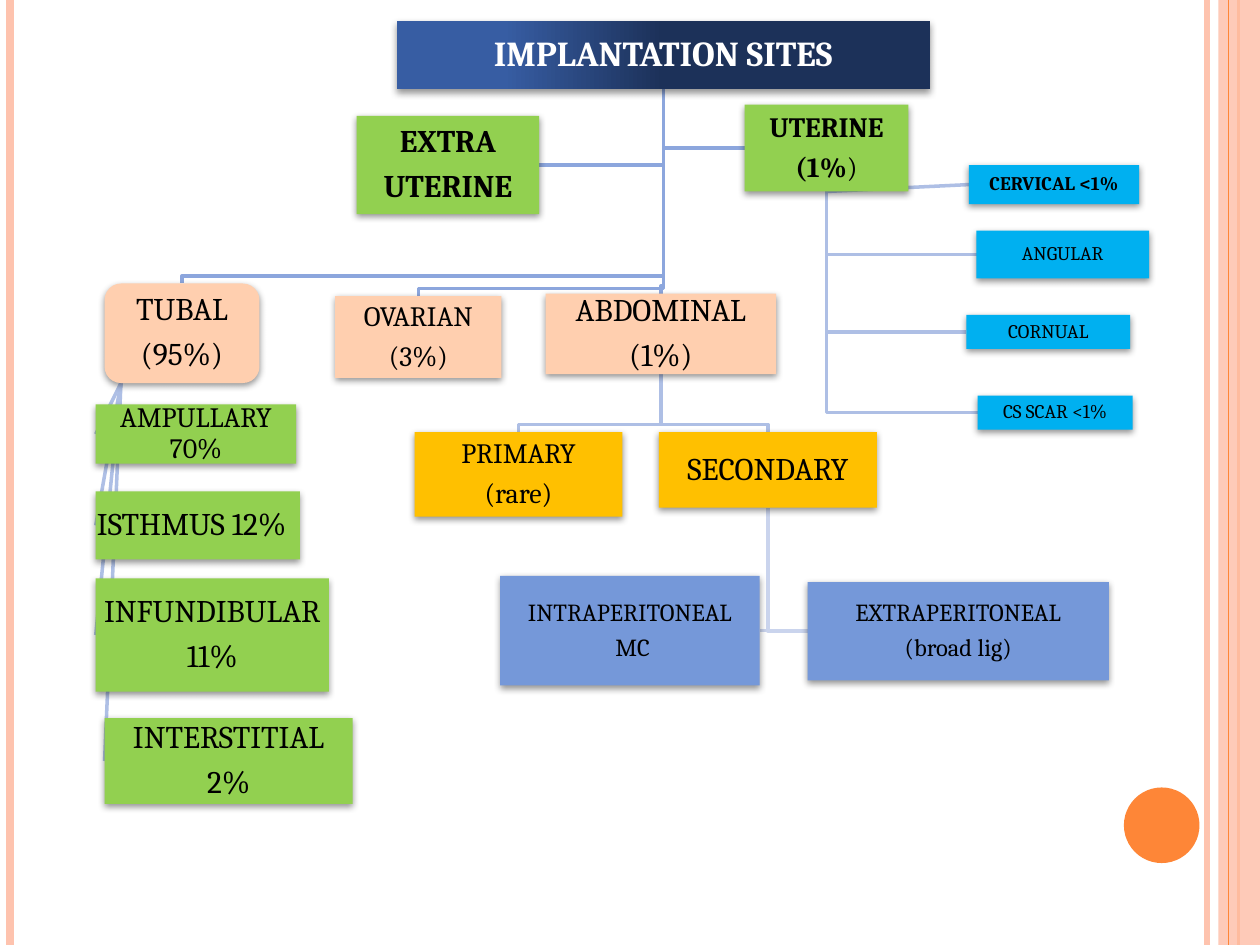
"""Build the implantation sites tree slide."""
from dataclasses import dataclass

from lxml.etree import SubElement
from pptx import Presentation
from pptx.dml.color import RGBColor as Color
from pptx.enum.shapes import MSO_CONNECTOR as Connector, MSO_SHAPE as Shape
from pptx.enum.text import MSO_ANCHOR as Anchor, PP_ALIGN as Align
from pptx.oxml.ns import qn
from pptx.util import Inches, Pt


@dataclass(frozen=True)
class Theme:
    font: str = "Cambria"
    black: str = "000000"
    white: str = "FFFFFF"
    orange: str = "FE8637"
    pale_orange: str = "FEC3AE"
    peach: str = "FFCFAF"
    green: str = "92D050"
    amber: str = "FFC000"
    blue: str = "7598D9"
    cyan: str = "00B0F0"
    title_start: str = "375DA3"
    title_end: str = "1C3159"
    first_link: str = "8CA6DD"
    second_link: str = "AEBFE5"
    third_link: str = "CAD4ED"
    title_size: int = 20
    large: int = 18
    medium: int = 16
    small: int = 14
    tiny: int = 11


@dataclass(frozen=True)
class Box:
    text: str
    left: float
    top: float
    width: float
    height: float
    fill: str
    size: int
    bold: bool = False

    @property
    def center(self):
        return self.left + self.width / 2

    @property
    def middle(self):
        return self.top + self.height / 2

    @property
    def bottom(self):
        return self.top + self.height


THEME = Theme()
BOXES = {
    "title": Box("IMPLANTATION SITES", 3.15, 0.17, 4.23, 0.54, THEME.title_end, THEME.title_size, True),
    "tubal": Box("TUBAL\n(95%)", 0.83, 2.25, 1.23, 0.79, THEME.peach, THEME.large),
    "ampullary": Box("AMPULLARY 70%", 0.76, 3.21, 1.59, 0.47, THEME.green, THEME.medium),
    "infundibular": Box("INFUNDIBULAR\n11%", 0.76, 4.59, 1.85, 0.9, THEME.green, THEME.large),
    "interstitial": Box("INTERSTITIAL\n2%", 0.83, 5.7, 1.97, 0.68, THEME.green, THEME.large),
    "isthmus": Box("ISTHMUS 12%\t", 0.76, 3.9, 1.62, 0.54, THEME.green, THEME.large),
    "abdominal": Box("ABDOMINAL\n(1%)", 4.33, 2.33, 1.83, 0.64, THEME.peach, THEME.large),
    "secondary": Box("SECONDARY", 5.23, 3.43, 1.73, 0.6, THEME.amber, THEME.large),
    "intraperitoneal": Box("INTRAPERITONEAL\n MC", 3.97, 4.57, 2.06, 0.87, THEME.blue, THEME.small),
    "extraperitoneal": Box("EXTRAPERITONEAL\n(broad lig)", 6.41, 4.62, 2.39, 0.78, THEME.blue, THEME.small),
    "primary": Box("PRIMARY\n(rare)", 3.29, 3.43, 1.65, 0.67, THEME.amber, THEME.medium),
    "ovarian": Box("OVARIAN\n(3%)", 2.66, 2.35, 1.32, 0.65, THEME.peach, THEME.medium),
    "extrauterine": Box("EXTRA\nUTERINE", 2.83, 0.92, 1.45, 0.78, THEME.green, THEME.large, True),
    "uterine": Box("UTERINE\n(1%", 5.91, 0.83, 1.3, 0.69, THEME.green, THEME.medium, True),
    "angular": Box("ANGULAR", 7.75, 1.83, 1.37, 0.38, THEME.cyan, THEME.tiny),
    "cervical": Box("CERVICAL <1%", 7.69, 1.31, 1.35, 0.31, THEME.cyan, THEME.tiny, True),
    "cornual": Box("CORNUAL", 7.67, 2.5, 1.3, 0.27, THEME.cyan, THEME.tiny),
    "scar": Box("CS SCAR <1%", 7.76, 3.14, 1.23, 0.27, THEME.cyan, THEME.tiny),
}
SIDE_LINKS = [
    ("uterine", ["scar", "cornual", "angular"], THEME.second_link),
    ("title", ["uterine", "extrauterine"], THEME.first_link),
    ("secondary", ["extraperitoneal", "intraperitoneal"], THEME.third_link),
]
DOWN_LINKS = [
    ("title", ["ovarian", "abdominal", "tubal"], THEME.first_link),
    ("abdominal", ["primary", "secondary"], THEME.second_link),
]
TUBAL_PARTS = ["isthmus", "interstitial", "infundibular", "ampullary"]
EDGE_LINES = [(9.58, THEME.pale_orange, 3), (0.08, THEME.pale_orange, 4.5), (9.83, THEME.orange, 1.5)]


class TreeSlide:
    """Hold the theme and the current slide and draw its elements."""

    def __init__(self, slide, theme):
        self.shapes = slide.shapes
        self.theme = theme

    def line(self, start, end, color, width=2):
        points = [Inches(value) for value in (*start, *end)]
        connector = self.shapes.add_connector(Connector.STRAIGHT, *points)
        connector.line.color.rgb = Color.from_string(color)
        connector.line.width = Pt(width)
        SubElement(connector.element.spPr, qn("a:effectLst"))
        return connector

    def route(self, points, color):
        first, *rest = [(Inches(x), Inches(y)) for x, y in points]
        builder = self.shapes.build_freeform(*first)
        builder.add_line_segments(rest, close=False)
        shape = builder.convert_to_shape()
        shape.shadow.inherit = False
        shape.fill.background()
        shape.line.color.rgb = Color.from_string(color)
        shape.line.width = Pt(2)

    def side_link(self, parent, child, color):
        end = child.left if child.left > parent.center or child.center > parent.center else child.left + child.width
        self.route([(parent.center, parent.bottom), (parent.center, child.middle), (end, child.middle)], color)

    def down_link(self, parent, child, color):
        turn = child.top - 0.06
        self.route([(parent.center, parent.bottom), (parent.center, turn),
                    (child.center, turn), (child.center, child.top)], color)

    def plain(self, kind, left, top, width, height, color):
        shape = self.shapes.add_shape(kind, Inches(left), Inches(top), Inches(width), Inches(height))
        shape.shadow.inherit = False
        shape.fill.solid()
        shape.fill.fore_color.rgb = Color.from_string(color)
        shape.line.fill.background()
        return shape

    def translucent(self, shape, percent):
        color = shape.element.spPr.find(qn("a:solidFill"))[0]
        SubElement(color, qn("a:alpha"), val=str(percent * 1000))

    def shade(self, shape):
        shape.fill.gradient()
        shape.fill.gradient_angle = 0
        colors = (self.theme.title_start, self.theme.title_end)
        for stop, color, position in zip(shape.fill.gradient_stops, colors, (0.2, 0.5)):
            stop.color.rgb = Color.from_string(color)
            stop.position = position

    def cast_shadow(self, shape):
        effects = shape.element.spPr.find(qn("a:effectLst"))
        shadow = SubElement(effects, qn("a:outerShdw"), blurRad=str(Pt(4)), dist=str(Pt(1.6)),
                            dir="5400000", rotWithShape="0")
        color = SubElement(shadow, qn("a:srgbClr"), val=self.theme.black)
        SubElement(color, qn("a:alpha"), val="42000")

    def format_run(self, run, size, bold, color):
        run.font.name = self.theme.font
        run.font.size = Pt(size)
        run.font.bold = bold
        run.font.color.rgb = Color.from_string(color)

    def box(self, box, kind=Shape.RECTANGLE, color=THEME.black):
        shape = self.plain(kind, box.left, box.top, box.width, box.height, box.fill)
        self.cast_shadow(shape)
        frame = shape.text_frame
        frame.text = box.text
        frame.word_wrap = True
        frame.vertical_anchor = Anchor.MIDDLE
        frame.margin_left = frame.margin_right = frame.margin_top = frame.margin_bottom = Inches(0.01)
        for paragraph in frame.paragraphs:
            paragraph.alignment = Align.CENTER
            paragraph.line_spacing = 0.9
            paragraph.space_after = Pt(round(box.size * 0.35, 1))
            for run in paragraph.runs:
                self.format_run(run, box.size, box.bold, color)
        return shape


def main():
    presentation = Presentation()
    presentation.slide_width, presentation.slide_height = Inches(10), Inches(7.5)
    tree = TreeSlide(presentation.slides.add_slide(presentation.slide_layouts[6]), THEME)

    for x, color, width in EDGE_LINES:
        tree.line((x, 0), (x, 7.5), color, width)
    tree.translucent(tree.plain(Shape.RECTANGLE, 9.67, 0, 0.33, 7.5, THEME.pale_orange), 87)
    tree.line((9.75, 0), (9.75, 7.5), THEME.orange, 0.75)
    tree.plain(Shape.OVAL, 8.92, 6.25, 0.6, 0.6, THEME.orange)

    for links, draw in ((SIDE_LINKS, tree.side_link), (DOWN_LINKS, tree.down_link)):
        for parent, children, color in links:
            for child in children:
                draw(BOXES[parent], BOXES[child], color)
    uterine, cervical = BOXES["uterine"], BOXES["cervical"]
    straight = {name: tree.line((0.96, BOXES["tubal"].bottom), (BOXES[name].left, BOXES[name].middle),
                                THEME.second_link) for name in TUBAL_PARTS}
    straight["cervical"] = tree.line((uterine.center, uterine.bottom), (cervical.left, cervical.middle),
                                     THEME.second_link)

    kinds = {"tubal": Shape.FLOWCHART_ALTERNATE_PROCESS}
    colors = {"title": THEME.white}
    drawn = {name: tree.box(box, kinds.get(name, Shape.RECTANGLE), colors.get(name, THEME.black))
             for name, box in BOXES.items()}
    tree.shade(drawn["title"])
    bracket = drawn["uterine"].text_frame.paragraphs[1].add_run()
    bracket.text = ")"
    tree.format_run(bracket, uterine.size, False, THEME.black)
    for name, connector in straight.items():
        connector.end_connect(drawn[name], 1)
    straight["cervical"].begin_connect(drawn["uterine"], 2)
    presentation.save("out.pptx")


if __name__ == "__main__":
    main()
